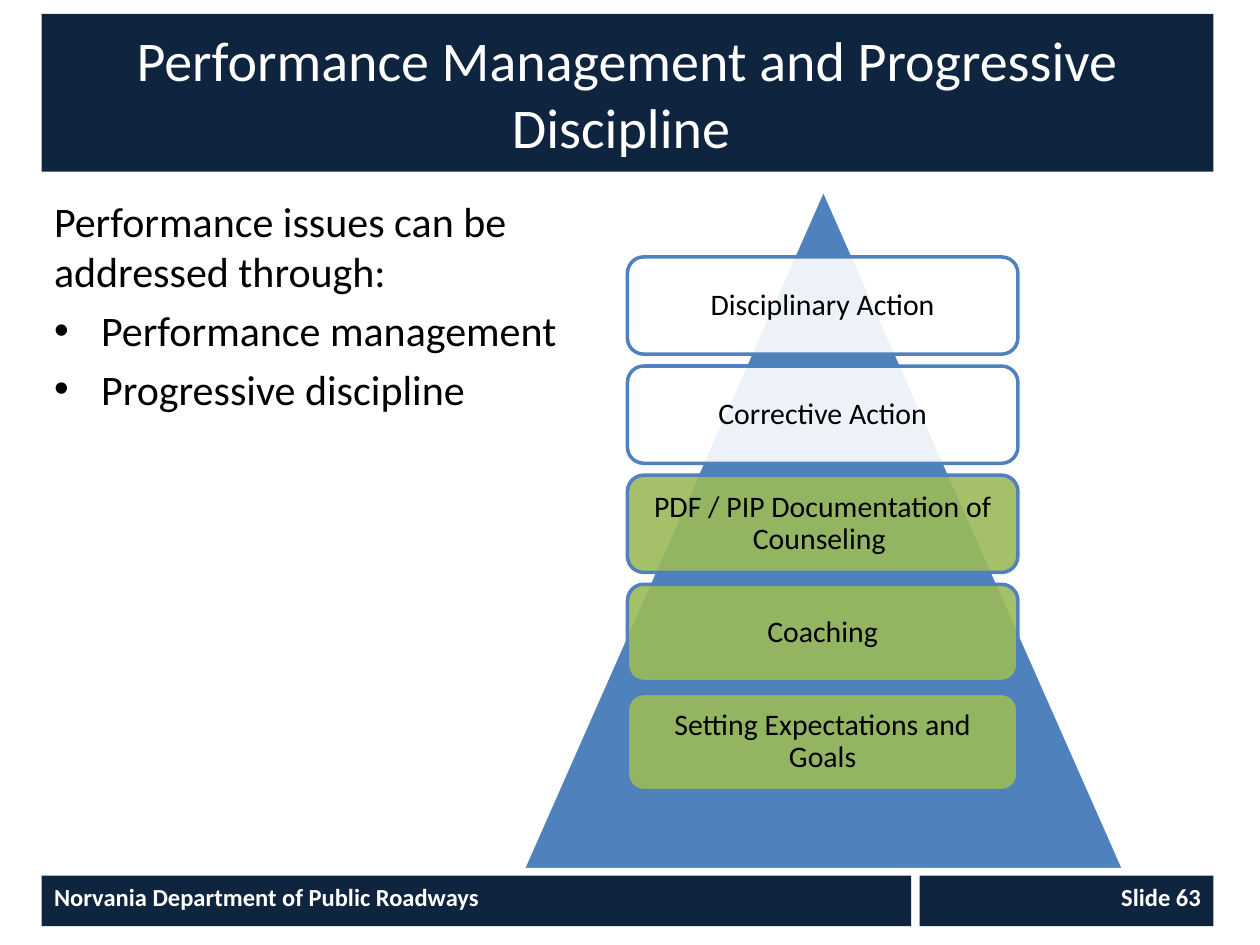
from lxml import etree
from pptx import Presentation
from pptx.dml.color import RGBColor
from pptx.enum.shapes import MSO_SHAPE as SHAPE
from pptx.enum.text import MSO_ANCHOR as ANCHOR, PP_ALIGN as ALIGN
from pptx.oxml.ns import qn
from pptx.util import Cm, Pt

COLORS = {
    "navy": "0F243E",
    "blue": "4F81BD",
    "green": "9BBB59",
    "white": "FFFFFF",
    "black": "000000",
}
FONT = "Calibri"
LEFT = 0.84
STEPS = [
    ("Disciplinary Action", "white"),
    ("Corrective Action", "white"),
    ("PDF / PIP Documentation of Counseling ", "green"),
    ("Coaching", "green"),
    ("Setting Expectations and Goals", "green"),
]
STEP_TOP, STEP_HEIGHT, STEP_PITCH = 5.18, 1.96, 2.2


def rgb(name):
    return RGBColor.from_string(COLORS[name])


def format_paragraph(p, size, color, align=ALIGN.LEFT, bold=False):
    p.alignment = align
    for r in p.runs:
        r.font.name = FONT
        r.font.size = Pt(size)
        r.font.bold = bold
        r.font.color.rgb = rgb(color)


def add_box(s, kind, left, top, width, height, fill, line=None):
    sp = s.shapes.add_shape(kind, Cm(left), Cm(top), Cm(width), Cm(height))
    sp.shadow.inherit = False
    sp.fill.solid()
    sp.fill.fore_color.rgb = rgb(fill)
    if line:
        sp.line.color.rgb = rgb(line)
        sp.line.width = Pt(2)
    else:
        sp.line.fill.background()
    return sp


def add_banner(s, text, left, top, width, height, size, align,
               anchor=ANCHOR.TOP, bold=True):
    """Navy bar with white text, used for the title and the footer."""
    sp = add_box(s, SHAPE.RECTANGLE, left, top, width, height, "navy")
    tf = sp.text_frame
    tf.word_wrap = True
    tf.vertical_anchor = anchor
    tf.text = text
    format_paragraph(tf.paragraphs[0], size, "white", align, bold)


def set_opacity(sp, percent):
    color = sp.fill._xPr.find(qn("a:solidFill"))[0]
    etree.SubElement(color, qn("a:alpha")).set("val", str(percent * 1000))


def add_step(s, text, fill, top):
    sp = add_box(s, SHAPE.ROUNDED_RECTANGLE, 12.65, top, 7.87, STEP_HEIGHT,
                 fill, "blue")
    set_opacity(sp, 90)
    tf = sp.text_frame
    tf.word_wrap = True
    tf.vertical_anchor = ANCHOR.MIDDLE
    tf.margin_left = tf.margin_right = Cm(0.18)
    tf.margin_top = tf.margin_bottom = Cm(0.18)
    tf.text = text
    p = tf.paragraphs[0]
    p.line_spacing = 0.9
    format_paragraph(p, 17, "black", ALIGN.CENTER)


def add_pyramid(s):
    add_box(s, SHAPE.ISOSCELES_TRIANGLE, 10.54, 3.81, 12.12, 13.72,
            "blue", "white")
    for i, (text, fill) in enumerate(STEPS):
        add_step(s, text, fill, STEP_TOP + i * STEP_PITCH)


def set_bullet(p):
    pPr = p._p.get_or_add_pPr()
    pPr.set("marL", str(Cm(0.95)))
    pPr.set("indent", str(-Cm(0.95)))
    etree.SubElement(pPr, qn("a:buFont")).set("typeface", "Arial")
    etree.SubElement(pPr, qn("a:buChar")).set("char", "•")


def add_body(s, intro, bullets):
    tf = s.shapes.add_textbox(Cm(LEFT), Cm(3.81), Cm(10.69), Cm(13.72)).text_frame
    tf.word_wrap = True
    tf.text = "\n".join([intro, *bullets])
    for i, p in enumerate(tf.paragraphs):
        p.space_before = Pt(4.8)
        format_paragraph(p, 24, "black")
        if i > 0:
            set_bullet(p)


def main():
    prs = Presentation()
    prs.slide_width, prs.slide_height = Cm(25.4), Cm(19.05)
    s = prs.slides.add_slide(prs.slide_layouts[6])
    add_banner(s, "Performance Management and Progressive Discipline ",
               LEFT, 0.28, 23.62, 3.18, 32, ALIGN.CENTER, ANCHOR.MIDDLE, False)
    add_pyramid(s)
    add_body(s, "Performance issues can be addressed through:",
             ["Performance management", "Progressive discipline"])
    add_banner(s, "Norvania Department of Public Roadways",
               LEFT, 17.65, 17.53, 1.02, 14, ALIGN.LEFT)
    add_banner(s, "Slide 63", 18.54, 17.65, 5.92, 1.02, 14, ALIGN.RIGHT)
    prs.save("out.pptx")


if __name__ == "__main__":
    main()
